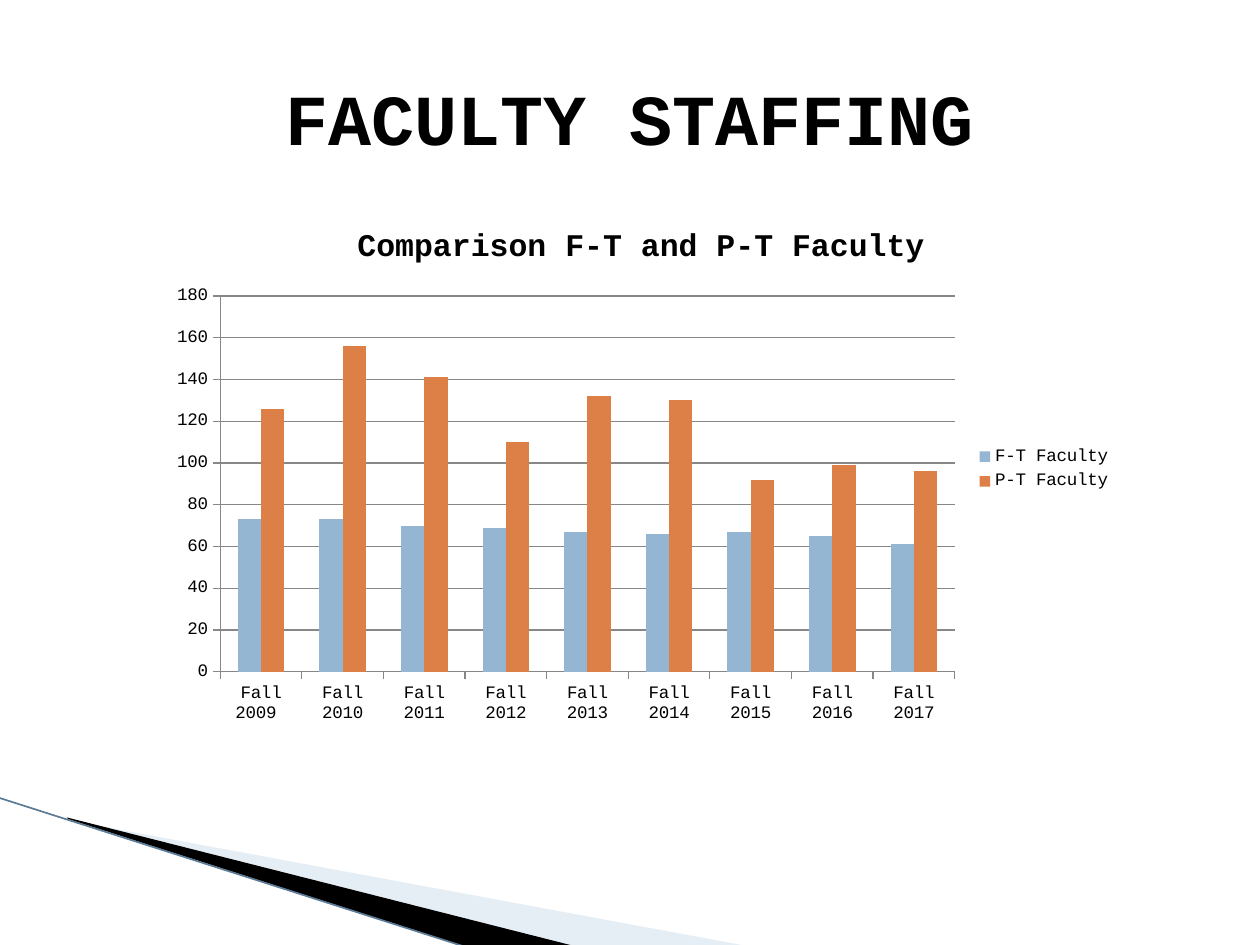
"""Build the faculty staffing slide with its clustered column chart."""
from lxml import etree
from pptx import Presentation
from pptx.chart.data import CategoryChartData
from pptx.dml.color import RGBColor
from pptx.enum.chart import XL_CHART_TYPE, XL_LEGEND_POSITION, XL_TICK_MARK
from pptx.enum.shapes import MSO_CONNECTOR
from pptx.enum.text import MSO_ANCHOR, PP_ALIGN
from pptx.oxml.ns import qn
from pptx.util import Cm, Pt

COLUMN = XL_CHART_TYPE.COLUMN_CLUSTERED
RIGHT = XL_LEGEND_POSITION.RIGHT
OUT = XL_TICK_MARK.OUTSIDE
STRAIGHT = MSO_CONNECTOR.STRAIGHT
MIDDLE = MSO_ANCHOR.MIDDLE
CENTER = PP_ALIGN.CENTER

HUES = {"black": "000000", "pale": "C0D3E6", "edge": "5B7A96",
        "grid": "878787", "blue": "94B6D2", "orange": "DD8047"}
HEAD = {"name": "Courier New", "size": Pt(41), "bold": True}
SUB = {"name": "Courier New", "size": Pt(18), "bold": True}
BODY = {"name": "Courier New", "size": Pt(10), "bold": False}


def hue(name):
    return RGBColor.from_string(HUES[name])


def style(font, form):
    for key, value in form.items():
        setattr(font, key, value)
    font.color.rgb = hue("black")


deck = Presentation()
deck.slide_width, deck.slide_height = Cm(25.4), Cm(19.05)
slide = deck.slides.add_slide(deck.slide_layouts[6])
shapes = slide.shapes

wedges = [
    ("pale", 40, [(1.4, 16.54), (15.11, 19.08), (11.58, 19.08), (1.4, 16.51)]),
    ("black", 100, [(1.35, 16.48), (11.61, 19.08), (9.45, 19.1), (1.37, 16.51)]),
]
for name, alpha, points in wedges:
    spots = [(Cm(x), Cm(y)) for x, y in points]
    build = shapes.build_freeform(*spots[0])
    build.add_line_segments(spots[1:], close=True)
    wedge = build.convert_to_shape()
    wedge.shadow.inherit = False
    wedge.line.fill.background()
    wedge.fill.solid()
    wedge.fill.fore_color.rgb = hue(name)
    if alpha < 100:
        tint = wedge.fill._xPr.find(".//" + qn("a:srgbClr"))
        etree.SubElement(tint, qn("a:alpha"), val=str(alpha * 1000))

edge = shapes.add_connector(STRAIGHT, Cm(-0.03), Cm(16.08), Cm(9.42), Cm(19.1))
edge.line.color.rgb = hue("edge")
edge.line.width = Pt(0.95)
etree.SubElement(edge._element.spPr, qn("a:effectLst"))

box = shapes.add_textbox(Cm(1.27), Cm(0.76), Cm(22.86), Cm(3.18))
frame = box.text_frame
frame.word_wrap = True
frame.vertical_anchor = MIDDLE
para = frame.paragraphs[0]
para.text = "FACULTY STAFFING"
para.alignment = CENTER
style(para.runs[0].font, HEAD)

data = CategoryChartData()
data.categories = ["Fall 2009 "] + [f"Fall {year}" for year in range(2010, 2018)]
data.add_series("F-T Faculty", [73, 73, 70, 69, 67, 66, 67, 65, 61])
data.add_series("P-T Faculty", [126, 156, 141, 110, 132, 130, 92, 99, 96])
chart = shapes.add_chart(COLUMN, Cm(3.18), Cm(4.11), Cm(19.48), Cm(10.69), data).chart
style(chart.font, BODY)

chart.has_title = True
label = chart.chart_title.text_frame
label.text = "Comparison F-T and P-T Faculty"
style(label.paragraphs[0].runs[0].font, SUB)
chart.chart_title.include_in_layout = False

chart.has_legend = True
chart.legend.position = RIGHT
chart.legend.include_in_layout = False

plot = chart.plots[0]
plot.gap_width = 150
plot.overlap = 0
plot.vary_by_categories = False
for series, name in zip(plot.series, ["blue", "orange"]):
    series.format.fill.solid()
    series.format.fill.fore_color.rgb = hue(name)

scale = chart.value_axis
scale.minimum_scale, scale.maximum_scale, scale.major_unit = 0, 180, 20
scale.has_major_gridlines = True
for axis in (scale, chart.category_axis):
    axis.major_tick_mark = OUT
for part in (scale, chart.category_axis, scale.major_gridlines):
    part.format.line.color.rgb = hue("grid")
    part.format.line.width = Pt(0.75)

deck.save("out.pptx")
